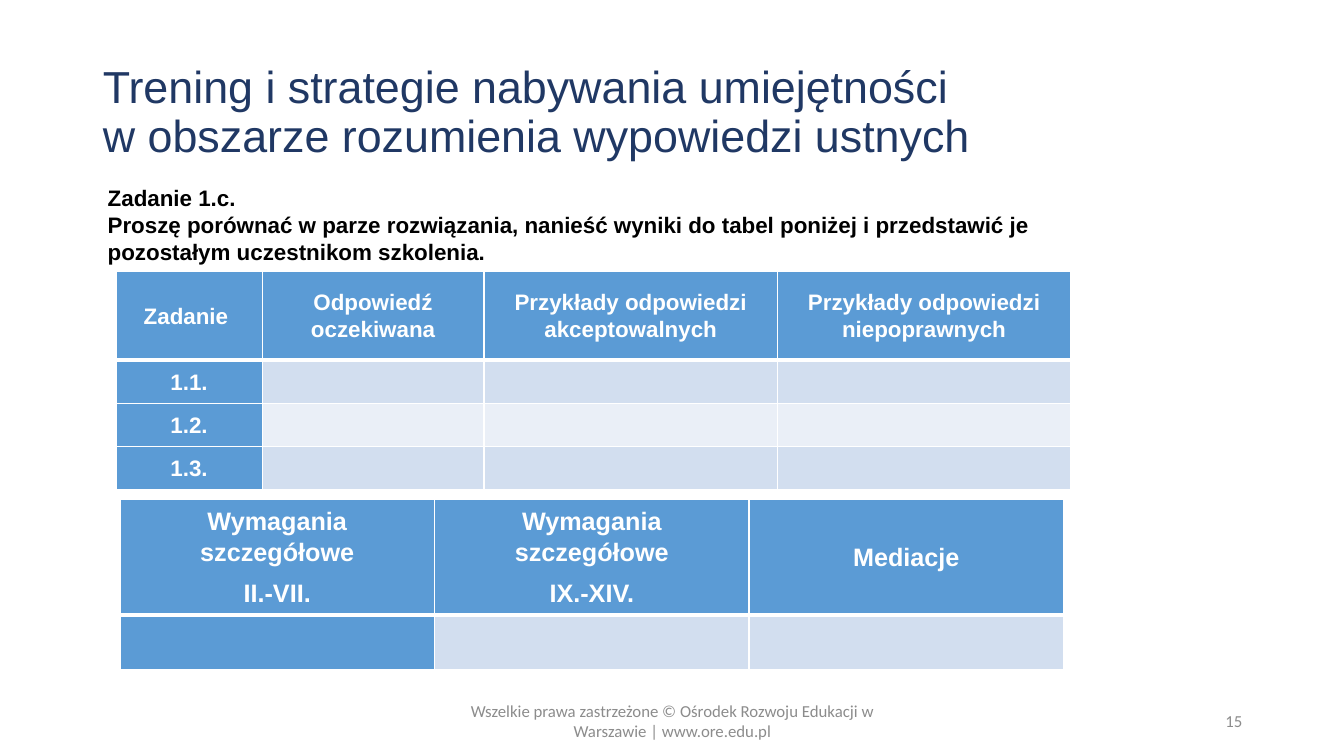
"""Build the training slide with its task text and two answer tables."""
import pptx
import pptx.dml.color
import pptx.enum.text
import pptx.oxml
import pptx.oxml.ns
import pptx.util

Inches = pptx.util.Inches
Pt = pptx.util.Pt
ALIGN = pptx.enum.text.PP_ALIGN
ANCHOR = pptx.enum.text.MSO_ANCHOR

COLORS = {
    "title": "203864",
    "text": "000000",
    "footer": "8C8C8C",
    "white": "FFFFFF",
    "accent": "5B9BD5",
    "band_dark": "D2DEEF",
    "band_light": "EAEFF7",
}


def color(name):
    return pptx.dml.color.RGBColor.from_string(COLORS[name])


def add_run(paragraph, text, size, color_name, font="Arial", bold=False):
    run = paragraph.add_run()
    run.text = text
    run.font.name = font
    run.font.size = Pt(size)
    run.font.bold = bold
    run.font.color.rgb = color(color_name)


def add_title(slide, lines):
    title = slide.shapes.title
    title.left, title.top = Inches(0.92), Inches(0.4)
    title.width, title.height = Inches(10.08), Inches(1.45)
    frame = title.text_frame
    frame.word_wrap = True
    frame.auto_size = pptx.enum.text.MSO_AUTO_SIZE.NONE
    frame.vertical_anchor = ANCHOR.MIDDLE
    paragraph = frame.paragraphs[0]
    paragraph.alignment = ALIGN.LEFT
    paragraph.line_spacing = 0.9
    for index, line in enumerate(lines):
        if index:
            paragraph.add_line_break()
        add_run(paragraph, line, 32, "title")


def add_text(slide, box, lines, align, anchor, **style):
    shape = slide.shapes.add_textbox(*map(Inches, box))
    frame = shape.text_frame
    frame.word_wrap = True
    frame.vertical_anchor = anchor
    for index, line in enumerate(lines):
        paragraph = frame.add_paragraph() if index else frame.paragraphs[0]
        paragraph.alignment = align
        add_run(paragraph, line, **style)


def set_borders(cell, top, bottom):
    properties = cell._tc.get_or_add_tcPr()
    for side, width in (("L", 1), ("R", 1), ("T", top), ("B", bottom)):
        properties.append(pptx.oxml.parse_xml(
            f'<a:ln{side} {pptx.oxml.ns.nsdecls("a")} w="{Pt(width)}">'
            f'<a:solidFill><a:srgbClr val="{COLORS["white"]}"/></a:solidFill>'
            f'</a:ln{side}>'))


def fill_cell(cell, text, size):
    cell.margin_left = cell.margin_right = Inches(0.07)
    cell.margin_top = cell.margin_bottom = 0
    cell.vertical_anchor = ANCHOR.MIDDLE
    if not text:
        return
    frame = cell.text_frame
    for index, line in enumerate(text.split("\n")):
        paragraph = frame.add_paragraph() if index else frame.paragraphs[0]
        paragraph.alignment = ALIGN.CENTER
        paragraph.line_spacing = 1.07
        paragraph.space_after = Pt(8)
        add_run(paragraph, line, size, "white", bold=True)


def add_table(slide, left, top, widths, heights, rows, size):
    table = slide.shapes.add_table(
        len(heights), len(widths), Inches(left), Inches(top),
        Inches(sum(widths)), Inches(sum(heights))).table
    for column, width in zip(table.columns, widths):
        column.width = Inches(width)
    for row, height in zip(table.rows, heights):
        row.height = Inches(height)
    for row_index, texts in enumerate(rows):
        band = "band_dark" if row_index % 2 else "band_light"
        for column_index, text in enumerate(texts):
            cell = table.cell(row_index, column_index)
            set_borders(cell, 3 if row_index == 1 else 1, 3 if row_index == 0 else 1)
            heading = row_index == 0 or column_index == 0
            cell.fill.solid()
            cell.fill.fore_color.rgb = color("accent" if heading else band)
            fill_cell(cell, text, size)


def main():
    presentation = pptx.Presentation()
    presentation.slide_width = Inches(13.33)
    presentation.slide_height = Inches(7.5)
    slide = presentation.slides.add_slide(presentation.slide_layouts[5])

    add_title(slide, ["Trening i strategie nabywania umiejętności ",
                      "w obszarze rozumienia wypowiedzi ustnych"])
    add_text(slide, (0.97, 1.78, 10.44, 0.9),
             ["Zadanie 1.c.",
              "Proszę porównać w parze rozwiązania, nanieść wyniki do tabel poniżej "
              "i przedstawić je pozostałym uczestnikom szkolenia."],
             ALIGN.LEFT, ANCHOR.TOP, size=16, color_name="text", bold=True)

    answers = [["Zadanie ", "Odpowiedź oczekiwana",
                "Przykłady odpowiedzi akceptowalnych",
                "Przykłady odpowiedzi niepoprawnych"]]
    answers += [[f"1.{number}.", "", "", ""] for number in range(1, 4)]
    add_table(slide, 1.15, 2.69, [1.45, 2.2, 2.91, 2.91],
              [0.88] + [0.43] * 3, answers, 16)

    requirements = [["Wymagania szczegółowe\nII.-VII.",
                     "Wymagania szczegółowe\nIX.-XIV.", "Mediacje"],
                    ["", "", ""]]
    add_table(slide, 1.19, 4.95, [3.12] * 3, [1.15, 0.54], requirements, 18)

    footer_style = {"size": 12, "color_name": "footer", "font": "Calibri"}
    add_text(slide, (4.42, 6.95, 4.5, 0.4),
             ["Wszelkie prawa zastrzeżone © Ośrodek Rozwoju Edukacji w Warszawie "
              "| www.ore.edu.pl"], ALIGN.CENTER, ANCHOR.MIDDLE, **footer_style)
    add_text(slide, (9.42, 6.95, 3, 0.4), ["15"],
             ALIGN.RIGHT, ANCHOR.MIDDLE, **footer_style)
    presentation.save("out.pptx")


if __name__ == "__main__":
    main()
